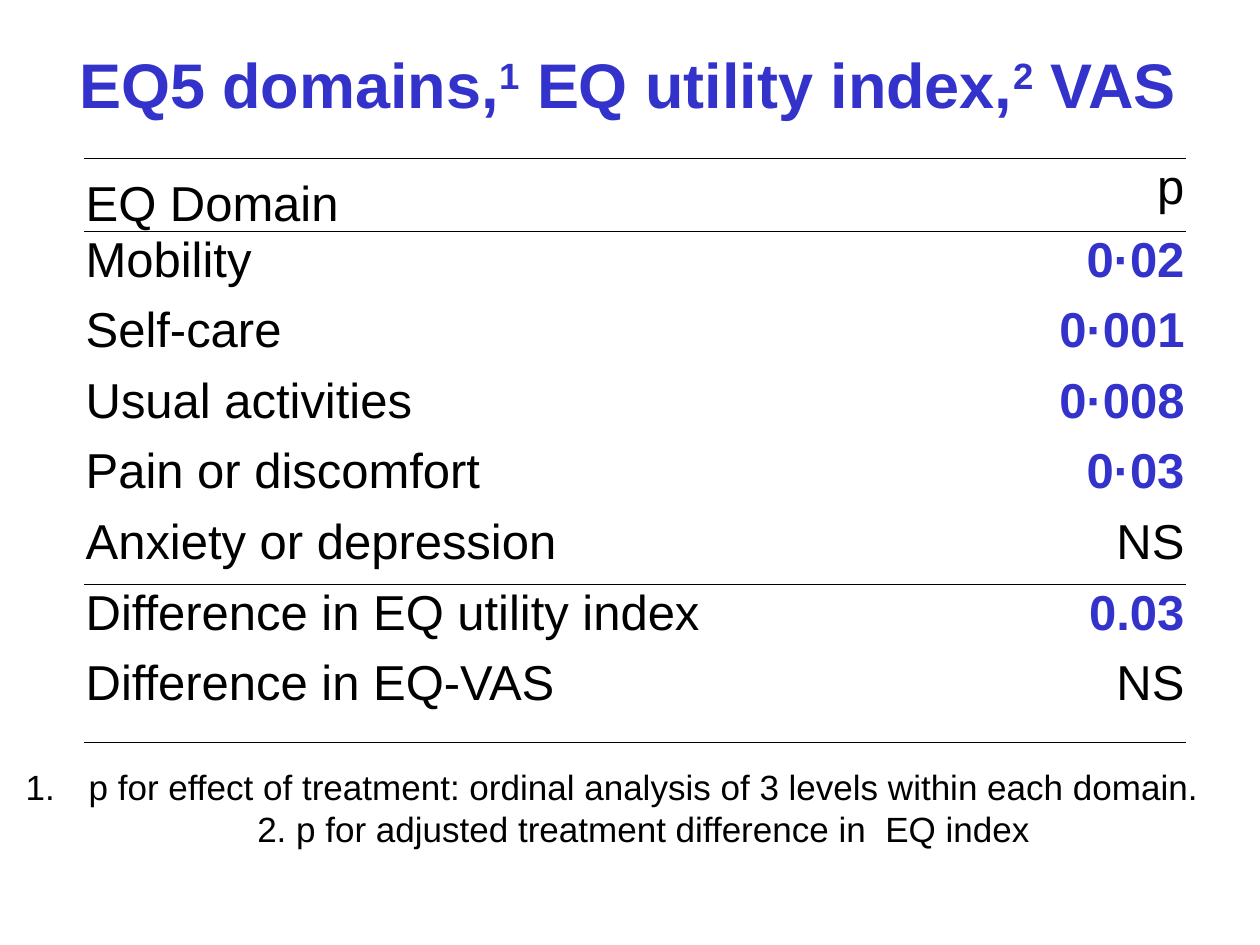
from typing import NamedTuple

from lxml import etree
from pptx import Presentation
from pptx import util as u
from pptx.dml.color import RGBColor
from pptx.enum import shapes, text
from pptx.oxml.ns import qn

SLIDE_W, SLIDE_H = u.Inches(10), u.Inches(7.5)
COLORS = {"ink": "000000", "accent": "3333CC", "paper": "FFFFFF"}
FONT = "Arial"
COLUMN_SHARES = (0.701, 0.173)
HEADER_H, ROW_H, LAST_H = 0.58, 0.56, 0.69


class Outcome(NamedTuple):
    label: str
    p_value: str
    significant: bool = False
    height: float = ROW_H
    rule_above: float = 0
    rule_below: float = 0
    anchor: text.MSO_ANCHOR = text.MSO_ANCHOR.TOP


OUTCOMES = [
    Outcome("EQ Domain", "p", height=HEADER_H, rule_above=0.5, rule_below=0.5,
            anchor=text.MSO_ANCHOR.BOTTOM),
    Outcome("Mobility", "0·02", True, rule_above=0.5),
    Outcome("Self-care", "0·001", True),
    Outcome("Usual activities", "0·008", True),
    Outcome("Pain or discomfort", "0·03", True),
    Outcome("Anxiety or depression", "NS", rule_below=1),
    Outcome("Difference in EQ utility index", "0.03", True, rule_above=1),
    Outcome("Difference in EQ-VAS", "NS", height=LAST_H, rule_below=0.5),
]


def share(left: float, top: float, width: float, height: float) -> tuple:
    """Turn shares of the slide into left, top, width and height."""
    return tuple(u.Emu(round(part * side)) for part, side in
                 zip((left, top, width, height), (SLIDE_W, SLIDE_H) * 2))


def write(paragraph, *parts: str, size: float, color: str = "ink",
          bold: bool = False, align=text.PP_ALIGN.LEFT) -> None:
    """Add runs to a paragraph; a part that starts with ^ is superscript."""
    paragraph.alignment = align
    for part in parts:
        run = paragraph.add_run()
        run.text = part.removeprefix("^")
        run.font.name, run.font.size, run.font.bold = FONT, u.Pt(size), bold
        run.font.color.rgb = RGBColor.from_string(COLORS[color])
        if part.startswith("^"):
            run._r.get_or_add_rPr().set("baseline", "30000")


def paint(fill) -> None:
    fill.solid()
    fill.fore_color.rgb = RGBColor.from_string(COLORS["paper"])


def set_borders(cell, above: float, below: float) -> None:
    """Rule the top and bottom of a cell, in points, and clear other edges."""
    properties = cell._tc.get_or_add_tcPr()
    edges = {"lnL": 0, "lnR": 0, "lnT": above, "lnB": below}
    for position, (tag, width) in enumerate(edges.items()):
        line = etree.Element(qn(f"a:{tag}"))
        if width:
            line.set("w", str(u.Pt(width)))
            solid = etree.SubElement(line, qn("a:solidFill"))
            etree.SubElement(solid, qn("a:srgbClr"), val=COLORS["ink"])
        else:
            etree.SubElement(line, qn("a:noFill"))
        properties.insert(position, line)


def add_title(slide) -> None:
    title = slide.shapes.title
    title.left, title.top, title.width, title.height = share(0.012, 0.028, 0.972, 0.12)
    frame = title.text_frame
    frame.auto_size = text.MSO_AUTO_SIZE.NONE
    frame.vertical_anchor = text.MSO_ANCHOR.MIDDLE
    write(frame.paragraphs[0], "EQ5 domains,", "^1", " EQ utility index,", "^2", " VAS",
          size=36, color="accent", bold=True, align=text.PP_ALIGN.CENTER)


def add_outcomes(slide, outcomes: list[Outcome]) -> None:
    box = share(0.067, 0.168, sum(COLUMN_SHARES), 0.616)
    table = slide.shapes.add_table(len(outcomes), len(COLUMN_SHARES), *box).table
    table.first_row = table.horz_banding = False
    for column, part in zip(table.columns, COLUMN_SHARES):
        column.width = round(part * SLIDE_W)

    for row, outcome in zip(table.rows, outcomes):
        row.height = u.Inches(outcome.height)
        label, p_value = row.cells
        for cell in (label, p_value):
            cell.margin_left = cell.margin_right = cell.margin_top = u.Inches(0.01)
            cell.margin_bottom = 0
            paint(cell.fill)
            set_borders(cell, outcome.rule_above, outcome.rule_below)
        label.vertical_anchor = outcome.anchor
        write(label.text_frame.paragraphs[0], outcome.label, size=28)
        write(p_value.text_frame.paragraphs[0], outcome.p_value, size=28,
              color="accent" if outcome.significant else "ink",
              bold=outcome.significant, align=text.PP_ALIGN.RIGHT)


def add_footnotes(slide) -> None:
    note = slide.shapes.add_shape(shapes.MSO_SHAPE.RECTANGLE,
                                  *share(0, 0.804, 0.972, 0.103))
    note.shadow.inherit = False
    paint(note.fill)
    note.line.fill.background()
    frame = note.text_frame
    frame.word_wrap = True
    frame.auto_size = text.MSO_AUTO_SIZE.SHAPE_TO_FIT_TEXT
    frame.vertical_anchor = text.MSO_ANCHOR.TOP
    paragraph = frame.paragraphs[0]
    properties = paragraph._p.get_or_add_pPr()
    properties.set("marL", str(u.Inches(0.5)))
    properties.set("indent", str(-u.Inches(0.5)))
    etree.SubElement(properties, qn("a:buFont"), typeface=FONT)
    etree.SubElement(properties, qn("a:buAutoNum"), type="arabicPeriod")
    write(paragraph,
          "p for effect of treatment: ordinal analysis of 3 levels within each domain. "
          "2. p for adjusted treatment difference in  EQ index",
          size=20, align=text.PP_ALIGN.CENTER)


def main() -> None:
    deck = Presentation()
    deck.slide_width, deck.slide_height = SLIDE_W, SLIDE_H
    slide = deck.slides.add_slide(deck.slide_layouts.get_by_name("Title Only"))
    add_title(slide)
    add_outcomes(slide, OUTCOMES)
    add_footnotes(slide)
    deck.save("out.pptx")


if __name__ == "__main__":
    main()
